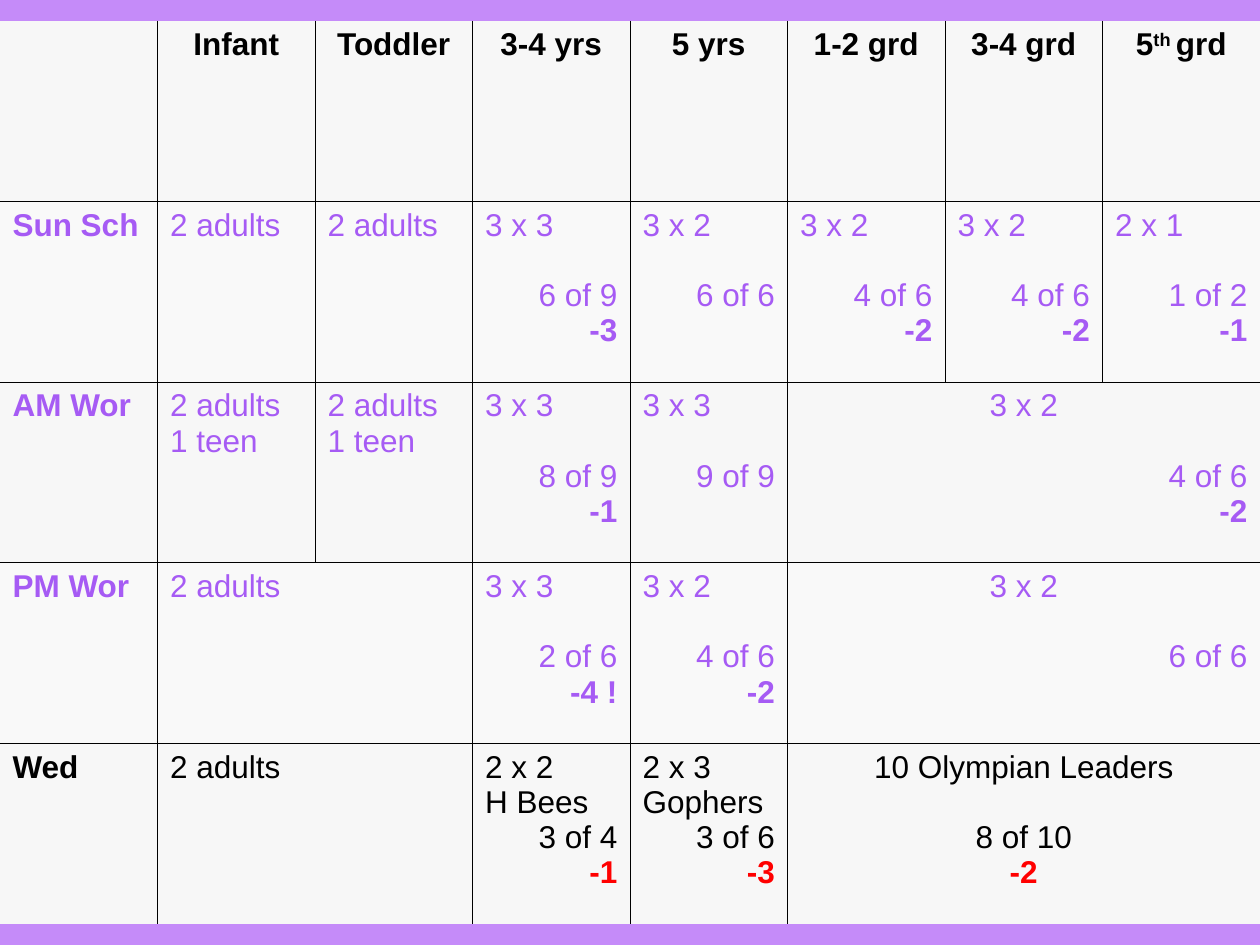
from lxml.etree import SubElement
from pptx import Presentation
from pptx.dml.color import RGBColor
from pptx.enum.text import PP_ALIGN as Align
from pptx.oxml.ns import qn
from pptx.util import Pt

COLORS = {
    "frame": "C58BF9", "plain": "F7F7F7", "tinted": "F9F9F9",
    "black": "000000", "purple": "A65BF4", "red": "FF0000",
}
COLUMNS, ROWS = 8, 5
LINE_GAP = 20  # one empty line between the staffing plan and the tally


def write(paragraph, text, color="black", bold=False, align=Align.LEFT, before=0, raised=False):
    paragraph.alignment = align
    paragraph.space_before = Pt(before)
    run = paragraph.add_run()
    run.text = text
    run.font.name = "Arial"
    run.font.size = Pt(18)
    run.font.bold = bold
    run.font.color.rgb = RGBColor.from_string(COLORS[color])
    if raised:
        run.font._element.set("baseline", "30000")


def draw_borders(cell, **visible):
    props = cell._tc.get_or_add_tcPr()
    for side in "LRTB":
        line = SubElement(props, qn(f"a:ln{side}"), w=str(Pt(0.5)))
        if visible[side]:
            fill = SubElement(line, qn("a:solidFill"))
            SubElement(fill, qn("a:srgbClr"), val=COLORS["black"])
        else:
            SubElement(line, qn("a:noFill"))


prs = Presentation()
prs.slide_width, prs.slide_height = Pt(720), Pt(540)
slide = prs.slides.add_slide(prs.slide_layouts[6])
slide.background.fill.solid()
slide.background.fill.fore_color.rgb = RGBColor.from_string(COLORS["frame"])

# Staffing grid
grid = slide.shapes.add_table(ROWS, COLUMNS, Pt(0), Pt(12), Pt(720), Pt(516)).table
for column in grid.columns:
    column.width = Pt(90)
for row in grid.rows:
    row.height = Pt(103.2)

# Age groups
age_groups = ["Infant", "Toddler", "3-4 yrs", "5 yrs", "1-2 grd", "3-4 grd", "5"]
for col, group in enumerate(age_groups, start=1):
    write(grid.cell(0, col).text_frame.paragraphs[0], group, bold=True, align=Align.CENTER)
fifth_grade = grid.cell(0, 7).text_frame.paragraphs[0]
write(fifth_grade, "th ", bold=True, align=Align.CENTER, raised=True)
write(fifth_grade, "grd", bold=True, align=Align.CENTER)

# Services: (columns spanned, plan lines, filled places, shortfall)
services = {
    "Sun Sch": [
        (1, ["2 adults"], "", ""), (1, ["2 adults"], "", ""),
        (1, ["3 x 3"], "6 of 9", "-3"), (1, ["3 x 2"], "6 of 6", ""),
        (1, ["3 x 2"], "4 of 6", "-2"), (1, ["3 x 2"], "4 of 6", "-2"),
        (1, ["2 x 1"], "1 of 2", "-1"),
    ],
    "AM Wor": [
        (1, ["2 adults", "1 teen"], "", ""), (1, ["2 adults", "1 teen"], "", ""),
        (1, ["3 x 3"], "8 of 9", "-1"), (1, ["3 x 3"], "9 of 9", ""),
        (3, ["3 x 2"], "4 of 6", "-2"),
    ],
    "PM Wor": [
        (2, ["2 adults"], "", ""),
        (1, ["3 x 3"], "2 of 6", "-4 !"), (1, ["3 x 2"], "4 of 6", "-2"),
        (3, ["3 x 2"], "6 of 6", ""),
    ],
    "Wed": [
        (2, ["2 adults"], "", ""),
        (1, ["2 x 2", "H Bees"], "3 of 4", "-1"), (1, ["2 x 3", "Gophers"], "3 of 6", "-3"),
        (3, ["10 Olympian Leaders"], "8 of 10", "-2"),
    ],
}
spans = {}
for row, (service, entries) in enumerate(services.items(), start=1):
    midweek = service == "Wed"
    color = "black" if midweek else "purple"
    write(grid.cell(row, 0).text_frame.paragraphs[0], service, color=color, bold=True)
    col = 1
    for span, plan, filled, shortfall in entries:
        cell = grid.cell(row, col)
        if span > 1:
            cell.merge(grid.cell(row, col + span - 1))
        for covered in range(col, col + span):
            spans[row, covered] = (col, col + span)

        plan_align = Align.CENTER if span == 3 else Align.LEFT
        tally_align = Align.CENTER if midweek and span == 3 else Align.RIGHT
        lines = [(text, dict(color=color, align=plan_align)) for text in plan]
        if filled:
            gap = LINE_GAP if len(plan) == 1 else 0
            lines.append((filled, dict(color=color, align=tally_align, before=gap)))
        if shortfall:
            alert = "red" if midweek else color
            lines.append((shortfall, dict(color=alert, bold=True, align=tally_align)))

        frame = cell.text_frame
        for number, (text, look) in enumerate(lines):
            write(frame.add_paragraph() if number else frame.paragraphs[0], text, **look)
        col += span

# Inner rules and row tints
for row in range(ROWS):
    for col in range(COLUMNS):
        cell = grid.cell(row, col)
        first, end = spans.get((row, col), (col, col + 1))
        draw_borders(cell, L=first > 0, R=end < COLUMNS, T=row > 0, B=row < ROWS - 1)
        cell.fill.solid()
        tint = "tinted" if row in (1, 3) else "plain"
        cell.fill.fore_color.rgb = RGBColor.from_string(COLORS[tint])

prs.save("out.pptx")
